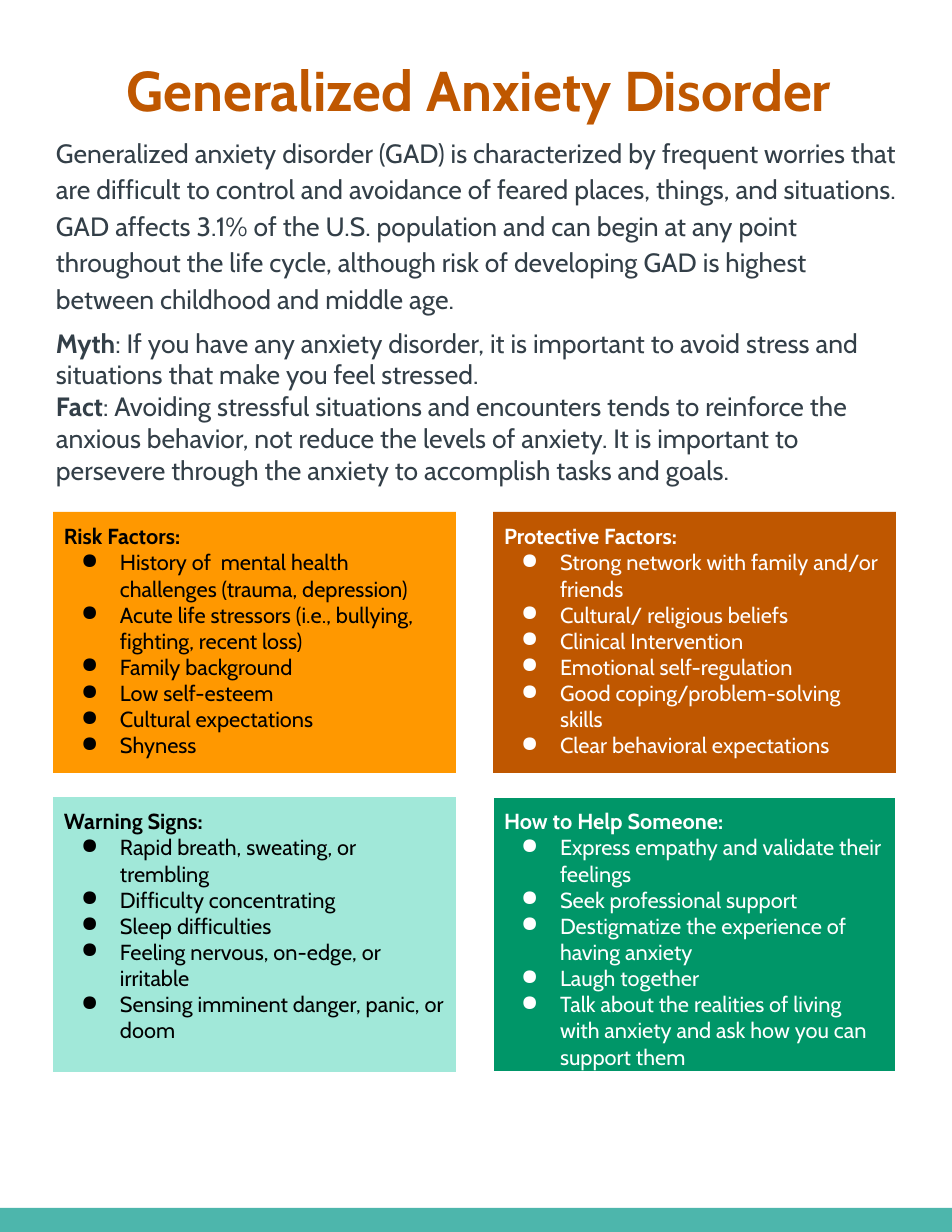
from pptx import Presentation
from pptx.dml.color import RGBColor
from pptx.enum.shapes import MSO_SHAPE as SHAPE
from pptx.enum.text import MSO_ANCHOR as ANCHOR, PP_ALIGN as ALIGN
from pptx.oxml.ns import qn
from pptx.util import Emu, Pt
from lxml.etree import SubElement


def px(n):
    return Emu(round(n * 914400 / 112))


def add_run(p, text, size, color, bold=False):
    r = p.add_run()
    r.text = text
    r.font.name = "Cabin"
    r.font.size = Pt(size)
    r.font.bold = bold
    r.font.color.rgb = RGBColor.from_string(color)


WHITE, BLACK, ORANGE, SLATE = "FFFFFF", "000000", "BF5700", "333F48"
INSET = 11

prs = Presentation()
prs.slide_width, prs.slide_height = px(952), px(1232)
s = prs.slides.add_slide(prs.slide_layouts[6])

# Footer bar
bar = s.shapes.add_shape(SHAPE.RECTANGLE, px(0), px(1208), px(952), px(24))
bar.shadow.inherit = False
bar.fill.solid()
bar.fill.fore_color.rgb = RGBColor.from_string("4DB6AC")
bar.line.fill.background()

# Title and introduction boxes
frames = []
for x, y, w, h in [(65, 45, 828, 92), (45, 121, 867, 367)]:
    tf = s.shapes.add_textbox(px(x), px(y), px(w), px(h)).text_frame
    tf.word_wrap = True
    tf.margin_left = tf.margin_right = tf.margin_top = tf.margin_bottom = px(INSET)
    frames.append(tf)
title, intro = frames

p = title.paragraphs[0]
p.alignment = ALIGN.CENTER
add_run(p, "Generalized Anxiety Disorder", 36, ORANGE, True)

p = intro.paragraphs[0]
p.line_spacing = 1.15
add_run(p, "Generalized anxiety disorder (GAD) is characterized by frequent worries that "
           "are difficult to control and avoidance of feared places, things, and situations. "
           "GAD affects 3.1% of the U.S. population and can begin at any point throughout the "
           "life cycle, although risk of developing GAD is highest between childhood and "
           "middle age.", 17, SLATE)

# Myth and fact
for label, text, gap in [
    ("Myth", ": If you have any anxiety disorder, it is important to avoid stress and "
             "situations that make you feel stressed.", 8),
    ("Fact", ": Avoiding stressful situations and encounters tends to reinforce the anxious "
             "behavior, not reduce the levels of anxiety. It is important to persevere "
             "through the anxiety to accomplish tasks and goals.", 0),
]:
    p = intro.add_paragraph()
    p.space_before = Pt(gap)
    add_run(p, label, 17, SLATE, True)
    add_run(p, text, 17, SLATE)

# Four cards, row by row: heading, fill, text colour, outline, bullets
cards = [
    ("Risk Factors:", "FF9800", BLACK, None, [
        "History of  mental health challenges (trauma, depression)",
        "Acute life stressors (i.e., bullying, fighting, recent loss)",
        "Family background",
        "Low self-esteem",
        "Cultural expectations",
        "Shyness"]),
    ("Protective Factors:", ORANGE, WHITE, None, [
        "Strong network with family and/or friends",
        "Cultural/ religious beliefs",
        "Clinical Intervention",
        "Emotional self-regulation",
        "Good coping/problem-solving skills",
        "Clear behavioral expectations"]),
    ("Warning Signs:", "A1E8D9", BLACK, None, [
        "Rapid breath, sweating, or trembling",
        "Difficulty concentrating",
        "Sleep difficulties",
        "Feeling nervous, on-edge, or irritable",
        "Sensing imminent danger, panic, or doom"]),
    ("How to Help Someone:", "009668", WHITE, WHITE, [
        "Express empathy and validate their feelings",
        "Seek professional support",
        "Destigmatize the experience of having anxiety",
        "Laugh together",
        "Talk about the realities of living with anxiety and ask how you can support them"]),
]
rows = [(512, 261), (797, 275)]

for i, (heading, fill, color, outline, items) in enumerate(cards):
    top, height = rows[i // 2]
    sp = s.shapes.add_shape(SHAPE.RECTANGLE, px(53 + 440 * (i % 2)), px(top), px(403), px(height))
    sp.shadow.inherit = False
    sp.fill.solid()
    sp.fill.fore_color.rgb = RGBColor.from_string(fill)
    if outline:
        sp.line.color.rgb = RGBColor.from_string(outline)
        sp.line.width = Pt(0.75)
    else:
        sp.line.fill.background()

    tf = sp.text_frame
    tf.word_wrap = True
    tf.vertical_anchor = ANCHOR.TOP
    tf.margin_left = tf.margin_right = tf.margin_top = tf.margin_bottom = px(INSET)
    p = tf.paragraphs[0]
    p.alignment = ALIGN.LEFT
    add_run(p, heading, 14, color, True)

    for item in items:
        p = tf.add_paragraph()
        p.alignment = ALIGN.LEFT
        pPr = p._p.get_or_add_pPr()
        pPr.set("marL", str(px(56)))
        pPr.set("indent", str(px(-39)))
        SubElement(SubElement(pPr, qn("a:buClr")), qn("a:srgbClr")).set("val", color)
        SubElement(pPr, qn("a:buChar")).set("char", "●")
        add_run(p, item, 14, color)

prs.save("out.pptx")
